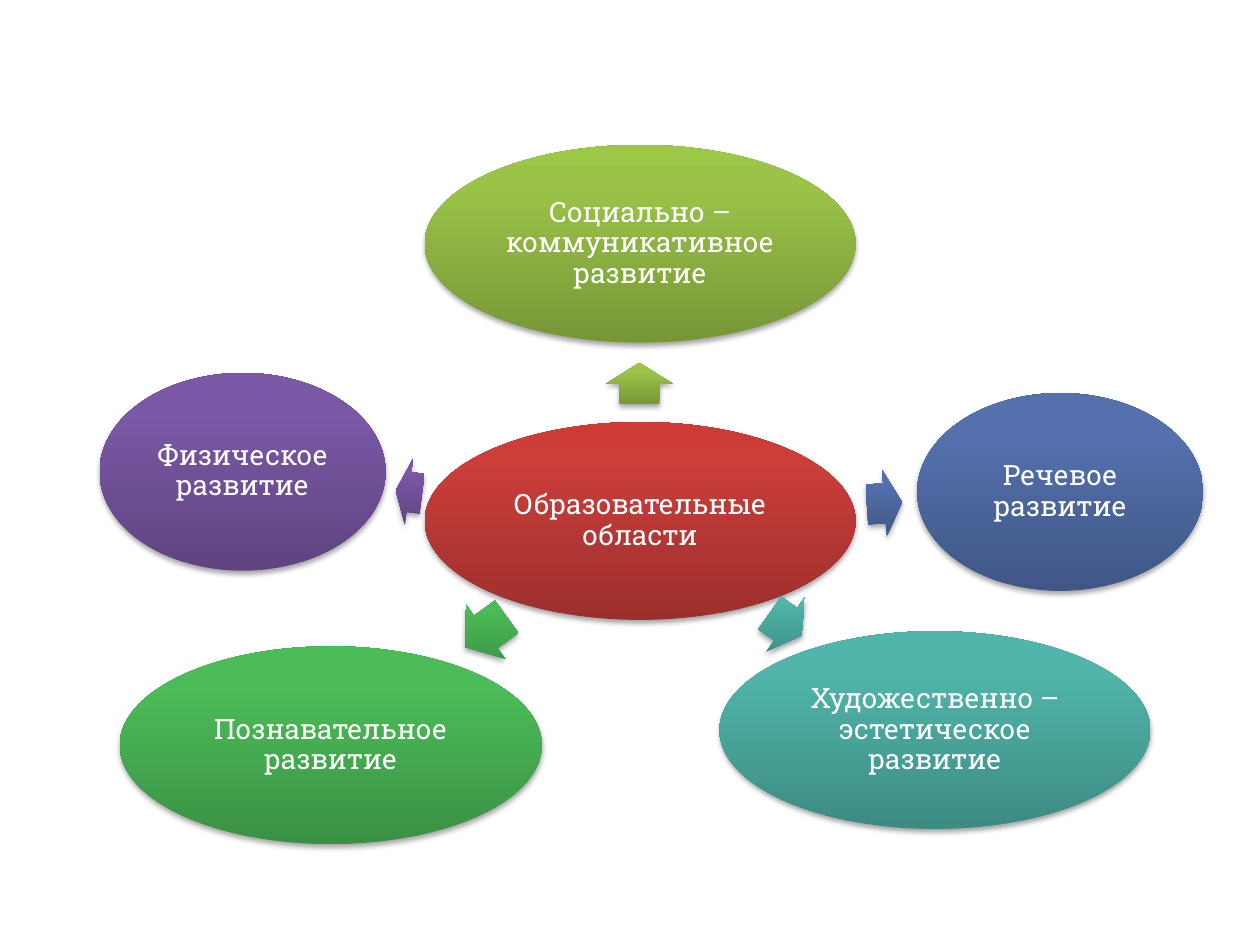
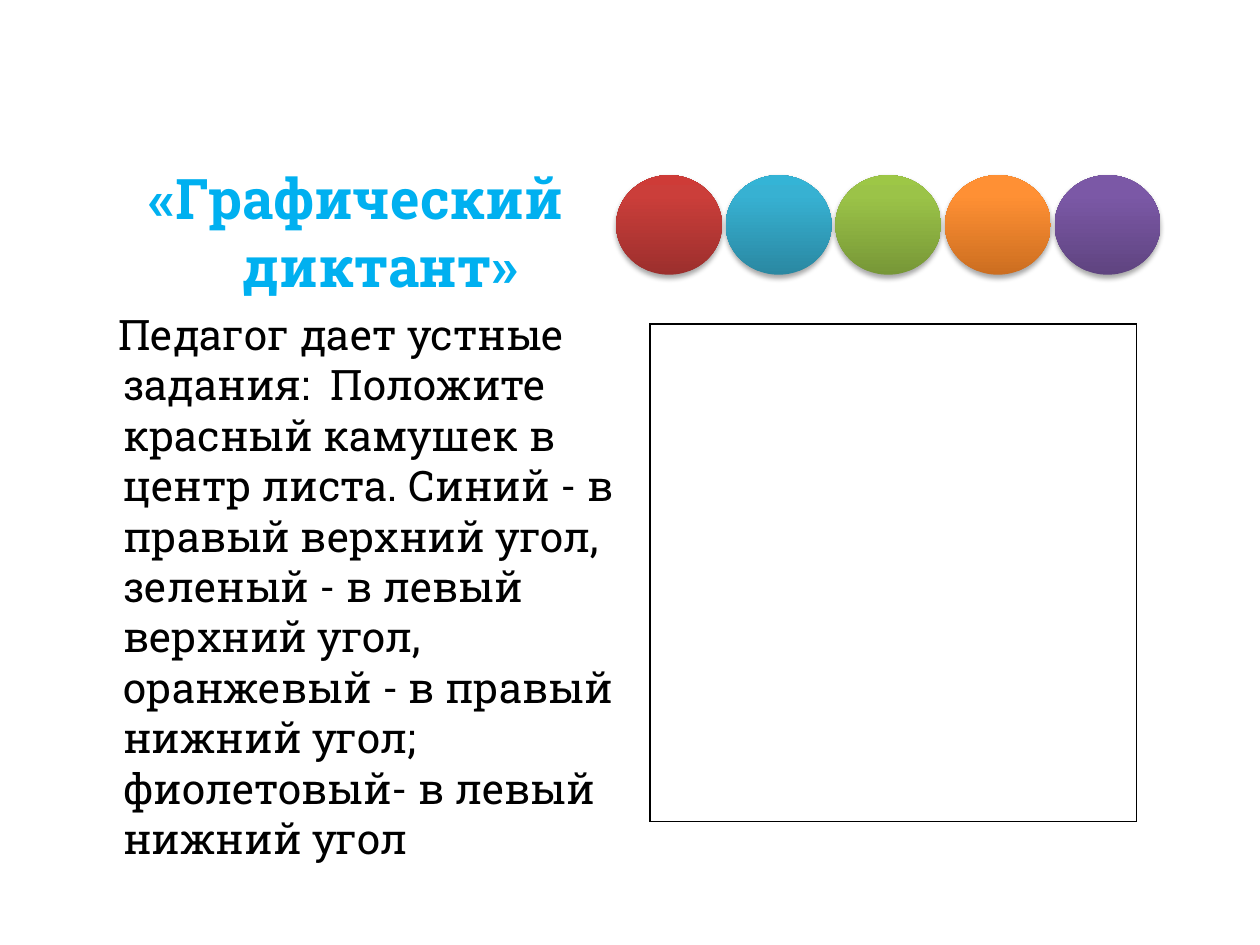
import pptx
import pptx.util
import pptx.dml.color
import pptx.enum.shapes
import pptx.enum.text
import pptx.oxml
import pptx.oxml.ns
from copy import deepcopy

Inches = pptx.util.Inches
Pt = pptx.util.Pt
RGBColor = pptx.dml.color.RGBColor
MSO_SHAPE = pptx.enum.shapes.MSO_SHAPE
MSO_ANCHOR = pptx.enum.text.MSO_ANCHOR
MSO_AUTO_SIZE = pptx.enum.text.MSO_AUTO_SIZE
PP_ALIGN = pptx.enum.text.PP_ALIGN
NSDECL = pptx.oxml.ns.nsdecls("a")

# Colours
WHITE = RGBColor(0xFF, 0xFF, 0xFF)
BLACK = RGBColor(0x00, 0x00, 0x00)
SKY = RGBColor(0x00, 0xB0, 0xF0)

# Gradients from bottom to top: dark, middle, light
RED = (RGBColor(0x9C, 0x2F, 0x2D), RGBColor(0xCB, 0x3E, 0x3A), RGBColor(0xCE, 0x3B, 0x37))
LIME = (RGBColor(0x77, 0x97, 0x37), RGBColor(0x9B, 0xC3, 0x48), RGBColor(0x9D, 0xC7, 0x46))
GREEN = (RGBColor(0x3A, 0x91, 0x44), RGBColor(0x4C, 0xBC, 0x58), RGBColor(0x4A, 0xBF, 0x57))
TEAL = (RGBColor(0x3D, 0x8B, 0x83), RGBColor(0x50, 0xB5, 0xAA), RGBColor(0x4E, 0xB8, 0xAC))
BLUE = (RGBColor(0x40, 0x57, 0x86), RGBColor(0x54, 0x71, 0xAE), RGBColor(0x52, 0x71, 0xB0))
VIOLET = (RGBColor(0x5F, 0x44, 0x80), RGBColor(0x7B, 0x58, 0xA6), RGBColor(0x7C, 0x57, 0xA8))
CYAN = (RGBColor(0x2A, 0x88, 0xA2), RGBColor(0x37, 0xB1, 0xD2), RGBColor(0x34, 0xB4, 0xD6))
ORANGE = (RGBColor(0xCC, 0x6E, 0x20), RGBColor(0xFF, 0x90, 0x34), RGBColor(0xFF, 0x91, 0x36))

TITLE_ONLY, BLANK = 5, 6


class Deck:
    font = "Roboto Slab"

    def __init__(self):
        self.prs = pptx.Presentation()
        self.prs.slide_width, self.prs.slide_height = Inches(10), Inches(7.5)
        self.s = None

    def slide(self, layout):
        self.s = self.prs.slides.add_slide(self.prs.slide_layouts[layout])

    def run(self, p, text, size, color, bold=False):
        r = p.add_run()
        r.text = text
        r.font.name, r.font.size, r.font.bold = self.font, Pt(size), bold
        r.font.color.rgb = color

    def frame(self, sp, anchor=MSO_ANCHOR.TOP):
        tf = sp.text_frame
        tf.word_wrap, tf.auto_size = True, MSO_AUTO_SIZE.NONE
        tf.vertical_anchor = anchor
        return tf

    def indent(self, p, left, first):
        pPr = p._p.get_or_add_pPr()
        pPr.set("marL", str(Inches(left)))
        pPr.set("indent", str(Inches(first)))

    def title(self, text, x, y, w, h):
        sp = self.s.shapes.title
        sp.left, sp.top, sp.width, sp.height = map(Inches, (x, y, w, h))
        p = self.frame(sp).paragraphs[0]
        p.alignment = PP_ALIGN.CENTER
        self.indent(p, 0.38, -0.38)
        self.run(p, text, 32, SKY, bold=True)

    def body(self, text, x, y, w, h):
        sp = self.s.shapes.add_textbox(*map(Inches, (x, y, w, h)))
        p = self.frame(sp).paragraphs[0]
        self.indent(p, 0.38, -0.04)
        self.run(p, text, 24, BLACK)

    def glossy(self, kind, x, y, w, h, gradient):
        """Borderless shape with a vertical gradient and a soft shadow."""
        sp = self.s.shapes.add_shape(kind, *map(Inches, (x, y, w, h)))
        sp.line.fill.background()
        sp.fill.gradient()
        sp.fill.gradient_angle = 90
        grad = sp._element.spPr.find(pptx.oxml.ns.qn("a:gradFill"))
        grad.set("rotWithShape", "0")
        stops = grad.find(pptx.oxml.ns.qn("a:gsLst"))
        stops.append(deepcopy(stops[-1]))
        for stop, pos, color in zip(sp.fill.gradient_stops, (0, 0.8, 1), gradient):
            stop.position, stop.color.rgb = pos, color
        sp.shadow.inherit = False
        effects = sp._element.spPr.find(pptx.oxml.ns.qn("a:effectLst"))
        effects.append(pptx.oxml.parse_xml(
            f'<a:outerShdw {NSDECL} blurRad="{Pt(3.1)}" dist="{Pt(1.8)}" dir="5400000" '
            'rotWithShape="0"><a:srgbClr val="000000"><a:alpha val="35000"/>'
            '</a:srgbClr></a:outerShdw>'))
        return sp

    def oval(self, x, y, w, h, gradient, text=None):
        sp = self.glossy(MSO_SHAPE.OVAL, x, y, w, h, gradient)
        if text:
            tf = self.frame(sp, MSO_ANCHOR.MIDDLE)
            tf.margin_left = tf.margin_right = tf.margin_top = tf.margin_bottom = Inches(0.02)
            p = tf.paragraphs[0]
            p.alignment, p.line_spacing = PP_ALIGN.CENTER, 0.9
            self.run(p, text, 16, WHITE)

    def arrow(self, x, y, w, angle, gradient):
        sp = self.glossy(MSO_SHAPE.RIGHT_ARROW, x, y, w, 0.53, gradient)
        sp.adjustments[0], sp.adjustments[1] = 0.6, 0.5
        sp.rotation = angle

    def sheet(self, x, y, w, h):
        """One-cell table with a thin black frame and no fill."""
        table = self.s.shapes.add_table(1, 1, *map(Inches, (x, y, w, h))).table
        table.first_row = table.horz_banding = False
        cell = table.cell(0, 0)
        tcPr = cell._tc.get_or_add_tcPr()
        for side in ("lnL", "lnR", "lnT", "lnB"):
            tcPr.append(pptx.oxml.parse_xml(
                f'<a:{side} {NSDECL} w="{Pt(1)}"><a:solidFill><a:srgbClr val="{BLACK}"/>'
                f'</a:solidFill></a:{side}>'))
        cell.fill.background()


def areas_slide(d):
    d.slide(BLANK)
    oval_h = 1.57
    d.oval(3.37, 3.35, 3.42, oval_h, RED, "Образовательные области")
    # Each area: gradient, text, oval (x, y, w), arrow (x, y, w, angle)
    areas = [
        (LIME, "Социально – коммуникативное развитие", (3.37, 1.15, 3.42), (4.91, 2.78, 0.33, 270)),
        (GREEN, "Познавательное развитие", (0.95, 5.13, 3.35), (3.65, 4.75, 0.41, 144)),
        (TEAL, "Художественно – эстетическое развитие", (5.71, 5.01, 3.42), (6.08, 4.69, 0.31, 35.3)),
        (BLUE, "Речевое развитие", (7.28, 3.12, 2.27), (6.88, 3.73, 0.28, 356.1)),
        (VIOLET, "Физическое развитие", (0.79, 2.96, 2.27), (3.14, 3.64, 0.21, 187)),
    ]
    for gradient, text, oval, arrow in areas:
        d.arrow(*arrow, gradient)
        d.oval(*oval, oval_h, gradient, text)


def dictation_slide(d):
    d.slide(TITLE_ONLY)
    d.title("«Графический диктант»", 0.5, 1.25, 4.66, 1.15)
    d.body("Педагог дает устные задания:  Положите красный камушек в центр листа. "
           "Синий - в правый верхний угол, зеленый - в левый верхний угол, "
           "оранжевый - в правый нижний угол; фиолетовый- в левый нижний угол",
           0.5, 2.4, 4.66, 4.3)
    d.sheet(5.16, 2.57, 3.86, 3.95)
    # Row of pebbles
    for i, gradient in enumerate((RED, CYAN, LIME, ORANGE, VIOLET)):
        d.oval(4.89 + 0.87 * i, 1.39, 0.84, 0.79, gradient)


def main():
    d = Deck()
    areas_slide(d)
    dictation_slide(d)
    d.prs.save("out.pptx")


if __name__ == "__main__":
    main()
